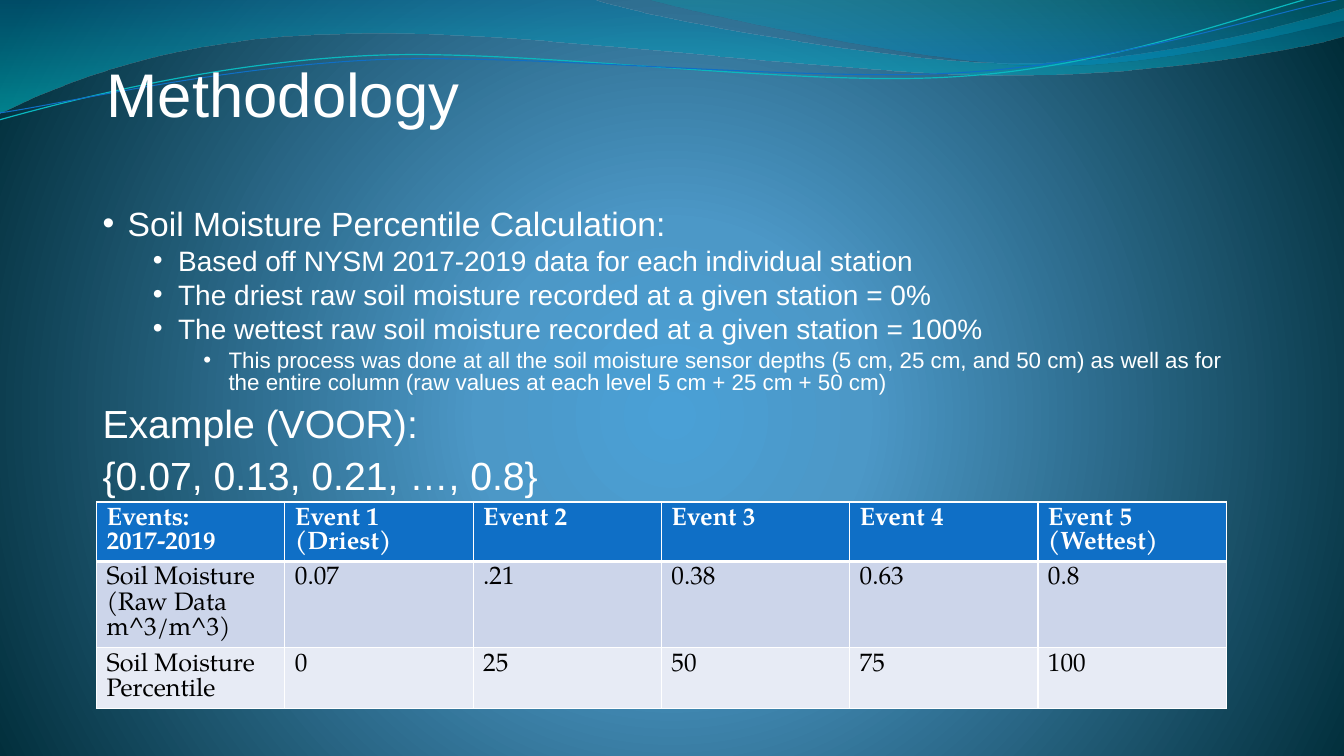
import lxml.etree
import pptx
import pptx.dml.color
import pptx.enum.text
import pptx.oxml
import pptx.util

Pt = pptx.util.Pt
DRAWING = "http://schemas.openxmlformats.org/drawingml/2006/main"
NS = f'xmlns:a="{DRAWING}"'
NS_P = 'xmlns:p="http://schemas.openxmlformats.org/presentationml/2006/main"'

COLORS = {
    "white": "FFFFFF", "black": "000000", "header": "0F6FC6",
    "row_dark": "CCD5EA", "row_light": "E7EBF5",
    "cyan_line": "0AB8BF", "blue_line": "0F6FC6",
    "glow": "4AA0D6", "mid": "4C98C7", "edge": "002C38",
    "wave_blue": "0074A1", "wave_cyan": "00C6CF",
    "wave_teal": "00A1A9", "wave_sky": "008BBF",
}

# Content: (text, size, indent level or None for no bullet, space before)
TITLE = "Methodology"
BODY = [
    ("Soil Moisture Percentile Calculation:", 24, 0, 0),
    ("Based off NYSM 2017-2019 data for each individual station", 20, 1, 5),
    ("The driest raw soil moisture recorded at a given station = 0%", 20, 1, 5),
    ("The wettest raw soil moisture recorded at a given station = 100%", 20, 1, 5),
    ("This process was done at all the soil moisture sensor depths (5 cm, 25 cm, "
     "and 50 cm) as well as for the entire column (raw values at each level "
     "5 cm + 25 cm + 50 cm)", 16, 2, 5),
    ("Example (VOOR):", 28, None, 10),
    ("{0.07, 0.13, 0.21, …, 0.8}", 28, None, 10),
]
TABLE = [
    ["Events:\n2017-2019", "Event 1 (Driest)", "Event 2", "Event 3", "Event 4",
     "Event 5 (Wettest)"],
    ["Soil Moisture (Raw Data m^3/m^3)", "0.07", ".21", "0.38", "0.63", "0.8"],
    ["Soil Moisture Percentile", "0", "25", "50", "75", "100"],
]
ROW_FILLS = ["header", "row_dark", "row_light"]

# Waves in points: a start, then lines (x, y) and Bezier curves (six numbers)
# Gradient stops: (position %, colour, opacity %)
WAVES = [
    ([(0, 0), (422.6, -0.7), (456.5, 12.2, 637.2, 45.4, 727.9, 45.4),
      (819.4, 45.4, 920.2, 18.7, 959.8, 6.5), (961.2, 25.9),
      (943.9, 31.7, 835.2, 54.7, 715.7, 54), (596.9, 54, 366.5, 20.2, 247, 24.5),
      (123.8, 25.9, 43.9, 59.8, -0.7, 81.4)],
     [(0, "wave_blue", 45), (100, "wave_cyan", 55)]),
    ([(460.1, -0.7), (488.9, 7.9, 654.5, 44.6, 738, 46.8),
      (821.5, 49.7, 923, 23, 959.8, 15.1), (959.8, 0)],
     [(0, "wave_teal", 30), (80, "wave_sky", 45)]),
]
WAVE_LINES = [
    ([(-0.7, 85.7), (46.1, 72.7, 151.9, 44.6, 265.7, 39.6),
      (379.4, 34.6, 568.8, 62.6, 684, 54.7),
      (799.2, 47.5, 901.4, 5.8, 958.3, -7.2)], "cyan_line", 0.85),
    ([(0, 80.6), (45.4, 74.2, 157, 47.5, 272.2, 42.5),
      (386.6, 38.2, 573.1, 59, 687.6, 51.8),
      (802.8, 44.6, 903.6, 10.1, 960.5, -1.4)], "blue_line", 0.75),
]


def rgb(name):
    return pptx.dml.color.RGBColor.from_string(COLORS[name])


def gradient_xml(stops, direction):
    marks = "".join(
        f'<a:gs pos="{pos * 1000}"><a:srgbClr val="{COLORS[name]}">'
        f'<a:alpha val="{opacity * 1000}"/></a:srgbClr></a:gs>'
        for pos, name, opacity in stops)
    return (f'<a:gradFill {NS} rotWithShape="1"><a:gsLst>{marks}</a:gsLst>'
            f'{direction}</a:gradFill>')


def add_curve(page, steps, close):
    points = [(Pt(step[i]), Pt(step[i + 1]))
              for step in steps for i in range(0, len(step), 2)]
    builder = page.shapes.build_freeform(*points[0], scale=1.0)
    builder.add_line_segments(points[1:], close=close)
    shape = builder.convert_to_shape()
    # Join each three segments of a Bezier step into one curve
    segments = iter(list(shape.element.iter(f"{{{DRAWING}}}lnTo")))
    for step in steps[1:]:
        parts = [next(segments) for _ in range(len(step) // 2)]
        if len(parts) == 3:
            curve = lxml.etree.Element(f"{{{DRAWING}}}cubicBezTo")
            parts[0].addprevious(curve)
            for part in parts:
                curve.append(part[0])
                part.getparent().remove(part)
    shape.shadow.inherit = False
    shape.fill.background()
    shape.line.fill.background()
    return shape


def write(para, text, size=18, font="Arial", color="white", bold=False,
          spacing=None, before=0, level=None):
    if level is not None:
        para.level = level
        props = para._p.get_or_add_pPr()
        props.set("marL", str(Pt(18 + 36 * level)))
        props.set("indent", str(Pt(-18)))
        for xml in (f'<a:buFont {NS} typeface="Arial"/>', f'<a:buChar {NS} char="•"/>'):
            props.append(pptx.oxml.parse_xml(xml))
    para.alignment = pptx.enum.text.PP_ALIGN.LEFT
    para.space_before = Pt(before)
    if spacing:
        para.line_spacing = spacing
    span = para.add_run()
    span.text = text
    span.font.size = Pt(size)
    span.font.name = font
    span.font.bold = bold
    span.font.color.rgb = rgb(color)


def set_borders(cell, **widths):
    props = cell._tc.get_or_add_tcPr()
    for i, side in enumerate("LRTB"):
        props.insert(i, pptx.oxml.parse_xml(
            f'<a:ln{side} {NS} w="{Pt(widths.get(side, 1))}"><a:solidFill>'
            f'<a:srgbClr val="{COLORS["white"]}"/></a:solidFill></a:ln{side}>'))


deck = pptx.Presentation()
deck.slide_width, deck.slide_height = Pt(960), Pt(540)
page = deck.slides.add_slide(deck.slide_layouts[5])

# Background glow
glow = gradient_xml(
    [(0, "glow", 100), (25, "mid", 100), (100, "edge", 100)],
    '<a:path path="circle"><a:fillToRect l="10000" t="110000" r="10000" b="100000"/></a:path>')
page.element.cSld.insert(0, pptx.oxml.parse_xml(
    f'<p:bg {NS_P} {NS}><p:bgPr>{glow}<a:effectLst/></p:bgPr></p:bg>'))

# Waves along the top
for steps, stops in WAVES:
    props = add_curve(page, steps, True).element.spPr
    props.replace(props.find(f"{{{DRAWING}}}noFill"), pptx.oxml.parse_xml(
        gradient_xml(stops, '<a:lin ang="5400000" scaled="0"/>')))
for steps, color, width in WAVE_LINES:
    curve = add_curve(page, steps, False)
    curve.line.color.rgb = rgb(color)
    curve.line.width = Pt(width)

# Title, in front of the waves
title = page.shapes.title
title.left, title.top, title.width, title.height = Pt(69), Pt(42.5), Pt(828), Pt(104.4)
title.element.getparent().append(title.element)

# Body text
body = page.shapes.add_textbox(Pt(66.2), Pt(147), Pt(825), Pt(225.4))
for box in (title, body):
    box.text_frame.word_wrap = True
    box.text_frame.auto_size = pptx.enum.text.MSO_AUTO_SIZE.NONE
    box.text_frame.vertical_anchor = pptx.enum.text.MSO_ANCHOR.TOP
write(title.text_frame.paragraphs[0], TITLE, size=44, spacing=0.9)
for i, (text, size, level, before) in enumerate(BODY):
    para = body.text_frame.add_paragraph() if i else body.text_frame.paragraphs[0]
    write(para, text, size=size, level=level, before=before, spacing=0.8)

# Table of events
column_width, row_height = 134.5, 29.5
table = page.shapes.add_table(
    len(TABLE), len(TABLE[0]), Pt(69), Pt(358.6),
    Pt(column_width * len(TABLE[0])), Pt(row_height * len(TABLE))).table
for column in table.columns:
    column.width = Pt(column_width)
for r, texts in enumerate(TABLE):
    table.rows[r].height = Pt(row_height)
    for c, text in enumerate(texts):
        cell = table.cell(r, c)
        cell.fill.solid()
        cell.fill.fore_color.rgb = rgb(ROW_FILLS[r])
        set_borders(cell, T=3 if r == 1 else 1, B=3 if r == 0 else 1)
        for i, line in enumerate(text.split("\n")):
            para = cell.text_frame.add_paragraph() if i else cell.text_frame.paragraphs[0]
            write(para, line, font="TeX Gyre Pagella", bold=r == 0,
                  color="black" if r else "white")

deck.save("out.pptx")
